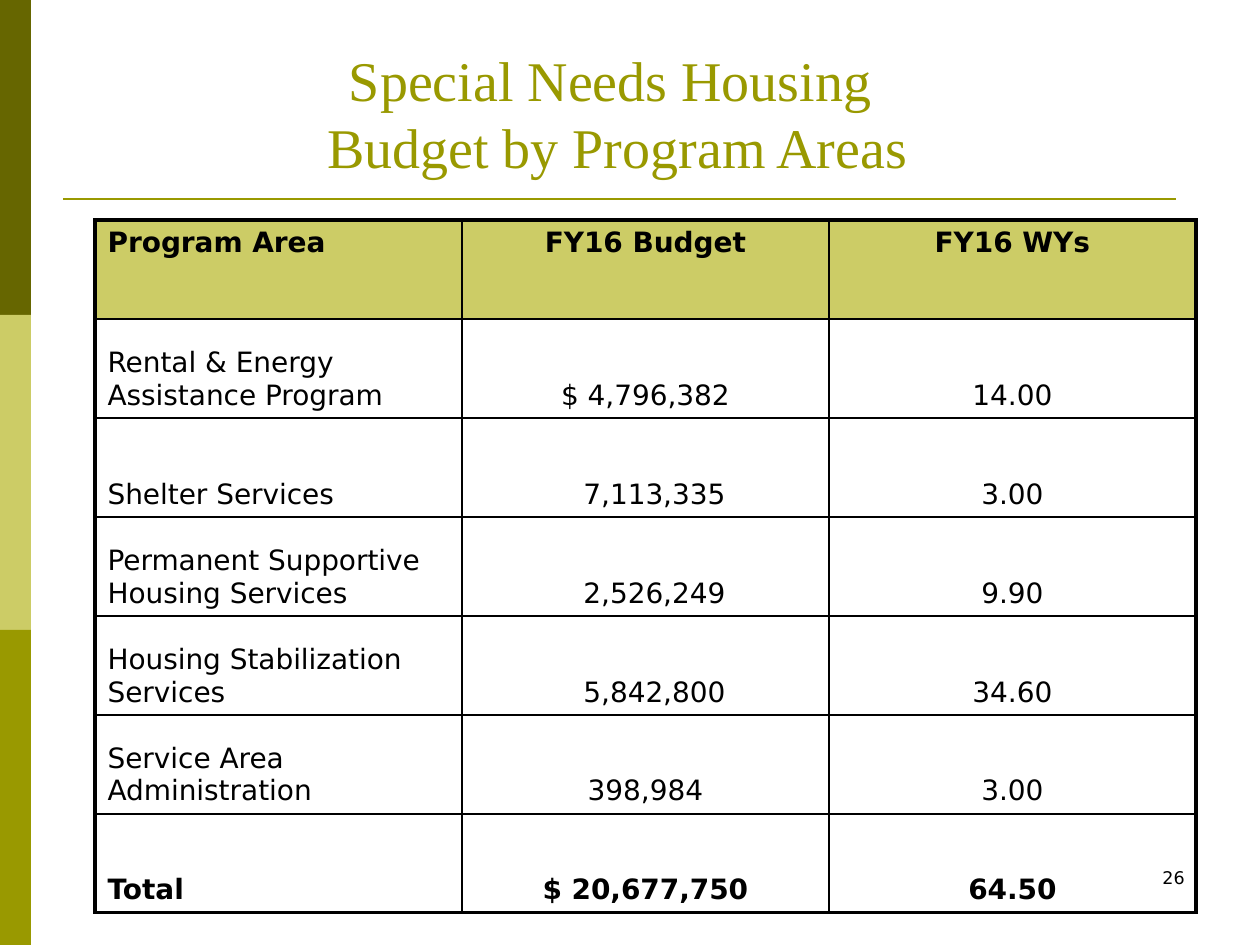
"""Build the Special Needs Housing budget slide."""
from typing import NamedTuple

from lxml import etree
from pptx import Presentation
from pptx import util as u
from pptx.dml.color import RGBColor
from pptx.enum import shapes, text
from pptx.oxml.ns import qn

COLORS = {"dark": "666600", "light": "CCCC66", "olive": "999900", "black": "000000"}
SANS, SERIF = "DejaVu Sans", "Times New Roman"
LEFT, CENTER, RIGHT = text.PP_ALIGN.LEFT, text.PP_ALIGN.CENTER, text.PP_ALIGN.RIGHT
TOP, BOTTOM = text.MSO_ANCHOR.TOP, text.MSO_ANCHOR.BOTTOM
THIN, THICK = 1, 2.25
COL_W, ROW_H = 367, 99
FIGURE_INDENT = 18


class Band(NamedTuple):
    top: int
    color: str


class Program(NamedTuple):
    area: str
    budget: str
    work_years: str
    indent: int = 0
    bold: bool = False


BANDS = [Band(0, "dark"), Band(315, "light"), Band(630, "olive")]
PROGRAMS = [
    Program("Program Area", "FY16 Budget", "FY16 WYs", bold=True),
    Program("Rental & Energy Assistance Program", "$ 4,796,382", "14.00"),
    Program("Shelter Services", "7,113,335", "3.00", FIGURE_INDENT),
    Program("Permanent Supportive Housing Services", "2,526,249", "9.90", FIGURE_INDENT),
    Program("Housing Stabilization Services", "5,842,800", "34.60", FIGURE_INDENT),
    Program("Service Area Administration", "398,984", "3.00"),
    Program("Total", "$ 20,677,750", "64.50", bold=True),
]


def px(n: int) -> u.Emu:
    return u.Emu(round(n * 914400 / 126))


def rgb(name: str) -> RGBColor:
    return RGBColor.from_string(COLORS[name])


def write(tf, words: str, *, size: int, font: str = SANS, color: str = "black",
          bold: bool = False, align=LEFT) -> None:
    tf.word_wrap = True
    p = tf.paragraphs[0]
    p.text = words
    p.alignment = align
    for r in p.runs:
        r.font.name, r.font.size, r.font.bold = font, u.Pt(size), bold
        r.font.color.rgb = rgb(color)


def draw_band(s, band: Band) -> None:
    sp = s.shapes.add_shape(shapes.MSO_SHAPE.RECTANGLE, px(0), px(band.top), px(31), px(315))
    sp.shadow.inherit = False
    sp.fill.solid()
    sp.fill.fore_color.rgb = rgb(band.color)
    sp.line.fill.background()


def draw_rule(s) -> None:
    line = s.shapes.add_connector(shapes.MSO_CONNECTOR.STRAIGHT, px(63), px(199), px(1176), px(199))
    line.line.color.rgb = rgb("olive")
    line.line.width = u.Pt(1.5)
    etree.SubElement(line._element.spPr, qn("a:effectLst"))


def set_borders(cell, widths: dict[str, float]) -> None:
    tc_pr = cell._tc.get_or_add_tcPr()
    for i, (side, width) in enumerate(widths.items()):
        ln = etree.Element(qn(f"a:ln{side}"), w=str(u.Pt(width)))
        fill = etree.SubElement(ln, qn("a:solidFill"))
        etree.SubElement(fill, qn("a:srgbClr"), val=COLORS["black"])
        tc_pr.insert(i, ln)


def draw_table(s, programs: list[Program]) -> None:
    rows, cols = len(programs), 3
    table = s.shapes.add_table(rows, cols, px(95), px(220), px(COL_W * cols), px(ROW_H * rows)).table
    table.first_row = table.horz_banding = False
    for col in table.columns:
        col.width = px(COL_W)
    for i, program in enumerate(programs):
        table.rows[i].height = px(ROW_H)
        for j, words in enumerate((program.area, program.budget, program.work_years)):
            cell = table.cell(i, j)
            write(cell.text_frame, words, size=16, bold=program.bold, align=CENTER if j else LEFT)
            cell.vertical_anchor = BOTTOM if i else TOP
            if j == 1:
                cell.margin_left = u.Inches(0.1) + px(program.indent)
            if i:
                cell.fill.background()
            else:
                cell.fill.solid()
                cell.fill.fore_color.rgb = rgb("light")
            outer = {"L": j == 0, "R": j == cols - 1, "T": i == 0, "B": i == rows - 1}
            set_borders(cell, {side: THICK if edge else THIN for side, edge in outer.items()})


def main() -> None:
    prs = Presentation()
    prs.slide_width, prs.slide_height = px(1260), px(945)
    s = prs.slides.add_slide(prs.slide_layouts[5])

    for band in BANDS:
        draw_band(s, band)
    draw_rule(s)

    number = s.shapes.add_textbox(px(903), px(861), px(294), px(63))
    write(number.text_frame, "26", size=10, align=RIGHT)

    title = s.shapes.title
    title.left, title.top, title.width, title.height = px(125), px(63), px(985), px(123)
    title.text_frame.vertical_anchor = BOTTOM
    title.text_frame.auto_size = text.MSO_AUTO_SIZE.NONE
    write(title.text_frame, "Special Needs Housing \vBudget by Program Areas",
          size=32, font=SERIF, color="olive", align=CENTER)

    draw_table(s, PROGRAMS)
    prs.save("out.pptx")


if __name__ == "__main__":
    main()
